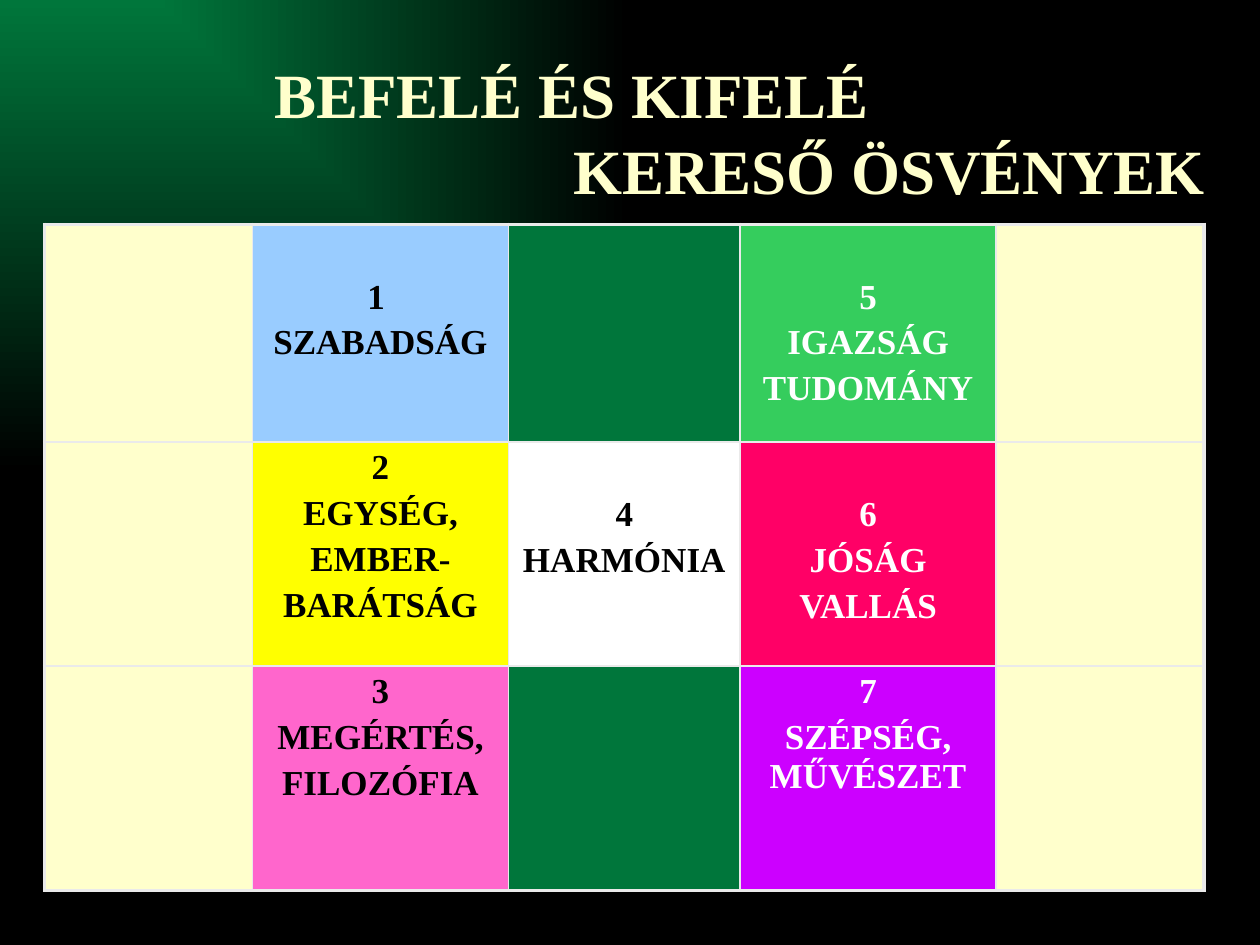
from lxml.etree import SubElement
from pptx import Presentation
from pptx.dml.color import RGBColor
from pptx.enum.text import MSO_ANCHOR, PP_ALIGN
from pptx.oxml import parse_xml
from pptx.oxml.ns import nsdecls, qn
from pptx.util import Cm, Pt

FONT = "Times New Roman"
GREEN = RGBColor(0x00, 0x76, 0x3B)
BLACK = RGBColor(0x00, 0x00, 0x00)
WHITE = RGBColor(0xFF, 0xFF, 0xFF)
CREAM = RGBColor(0xFF, 0xFF, 0xCC)
BLUE = RGBColor(0x99, 0xCC, 0xFF)
LIGHT_GREEN = RGBColor(0x35, 0xCD, 0x5D)
YELLOW = RGBColor(0xFF, 0xFF, 0x00)
RED = RGBColor(0xFF, 0x00, 0x66)
PINK = RGBColor(0xFF, 0x66, 0xCC)
PURPLE = RGBColor(0xCC, 0x00, 0xFF)
BORDER = RGBColor(0xEA, 0xEA, 0xEA)

COLUMNS = [Cm(4.19), Cm(5.16), Cm(4.67), Cm(5.16), Cm(4.19)]
ROWS = [Cm(4.39), Cm(4.52), Cm(4.52)]
HIGH, LOW = Cm(0.13), Cm(1.08)
EMPTY = (CREAM, BLACK, HIGH, [])
GAP = (GREEN, BLACK, HIGH, [])
PATHS = [
    [EMPTY, (BLUE, BLACK, LOW, ["1 ", "SZABADSÁG"]), GAP,
     (LIGHT_GREEN, WHITE, LOW, ["5", "IGAZSÁG", "TUDOMÁNY"]), EMPTY],
    [EMPTY, (YELLOW, BLACK, HIGH, ["2", "EGYSÉG,", "EMBER-", "BARÁTSÁG"]),
     (WHITE, BLACK, LOW, ["4", "HARMÓNIA"]),
     (RED, WHITE, LOW, ["6", "JÓSÁG", "VALLÁS"]), EMPTY],
    [EMPTY, (PINK, BLACK, HIGH, ["3", "MEGÉRTÉS,", "FILOZÓFIA"]), GAP,
     (PURPLE, WHITE, HIGH, ["7", "SZÉPSÉG, MŰVÉSZET"]), EMPTY],
]


def style_font(paragraph, size, color):
    """Apply the bold serif face to a paragraph."""
    font = paragraph.font
    font.name, font.size, font.bold = FONT, Pt(size), True
    font.color.rgb = color


def paint_background(slide):
    """Fade the background from green in the top left corner to black."""
    fill = slide.background.fill
    fill.gradient()
    for stop, color in zip(fill.gradient_stops, (GREEN, BLACK)):
        stop.color.rgb = color
    gradient = slide._element.find(".//" + qn("a:gradFill"))
    gradient.remove(gradient.find(qn("a:lin")))
    glow = SubElement(gradient, qn("a:path"), path="rect")
    SubElement(glow, qn("a:fillToRect"), r="100000", b="100000")


def add_title(slide, left, top, width, height):
    """Place the two-line heading with its second line indented."""
    frame = slide.shapes.add_textbox(left, top, width, height).text_frame
    frame.word_wrap = True
    frame.vertical_anchor = MSO_ANCHOR.MIDDLE
    frame.text = "BEFELÉ ÉS KIFELÉ\nKERESŐ ÖSVÉNYEK"
    for paragraph in frame.paragraphs:
        style_font(paragraph, 36, CREAM)
    frame.paragraphs[1]._p.get_or_add_pPr().set("marL", str(Cm(6.03)))


def border_cell(cell, outer_sides):
    """Draw the four cell edges, heavier on the outer sides."""
    properties = cell._tc.get_or_add_tcPr()
    for index, side in enumerate("LRTB"):
        width = Pt(2.25 if side in outer_sides else 1)
        properties.insert(index, parse_xml(
            f'<a:ln{side} {nsdecls("a")} w="{width}"><a:solidFill>'
            f'<a:srgbClr val="{BORDER}"/></a:solidFill></a:ln{side}>'))


def fill_cell(cell, background, ink, margin_top, lines):
    """Colour a cell and write its centred lines."""
    cell.fill.solid()
    cell.fill.fore_color.rgb = background
    cell.margin_top = margin_top
    cell.text = "\n".join(lines)
    for index, paragraph in enumerate(cell.text_frame.paragraphs):
        paragraph.alignment = PP_ALIGN.CENTER
        if index:
            paragraph.space_before = Pt(4)
        style_font(paragraph, 20, ink)


def add_paths_table(slide, left, top):
    """Place the grid of the seven paths."""
    table = slide.shapes.add_table(
        len(ROWS), len(COLUMNS), left, top, sum(COLUMNS), sum(ROWS)).table
    table.first_row = table.horz_banding = False
    for column, width in zip(table.columns, COLUMNS):
        column.width = width
    for row, height in zip(table.rows, ROWS):
        row.height = height
    for r, path_row in enumerate(PATHS):
        for c, content in enumerate(path_row):
            cell = table.cell(r, c)
            fill_cell(cell, *content)
            edges = {"L": c == 0, "R": c == len(COLUMNS) - 1,
                     "T": r == 0, "B": r == len(ROWS) - 1}
            border_cell(cell, [side for side, outer in edges.items() if outer])


def main():
    """Build and save the slide."""
    deck = Presentation()
    deck.slide_width, deck.slide_height = Cm(25.4), Cm(19.05)
    slide = deck.slides.add_slide(deck.slide_layouts[6])
    paint_background(slide)
    add_title(slide, Cm(5.28), Cm(0.64), Cm(19.69), Cm(4.01))
    add_paths_table(slide, Cm(0.9), Cm(4.52))
    deck.save("out.pptx")


if __name__ == "__main__":
    main()
